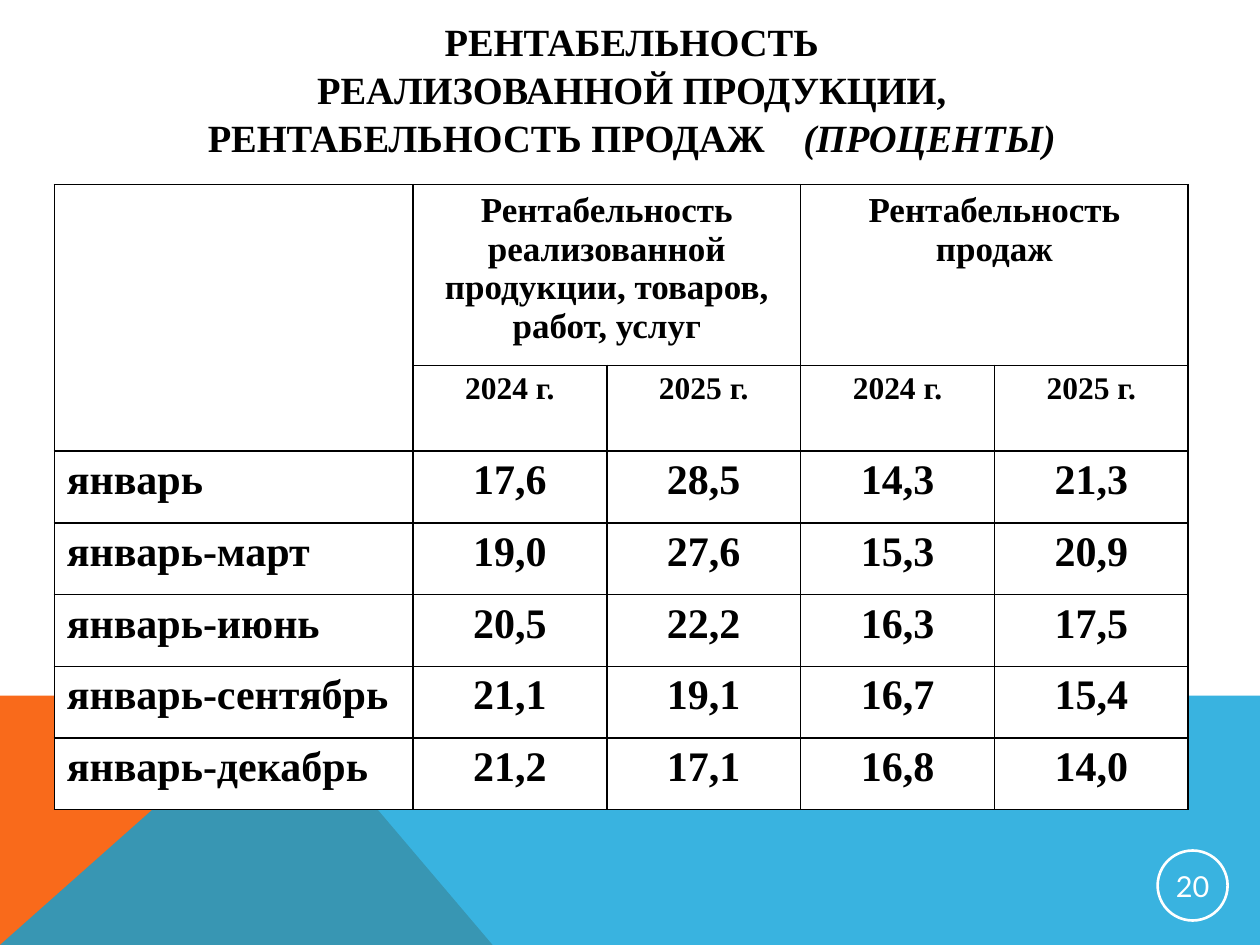
import pptx
import pptx.util
import pptx.dml.color
import pptx.enum.shapes
import pptx.enum.text
import pptx.oxml
import pptx.oxml.ns
import lxml.etree

Pt = pptx.util.Pt
RGBColor = pptx.dml.color.RGBColor
ALIGN = pptx.enum.text.PP_ALIGN
MIDDLE = pptx.enum.text.MSO_ANCHOR.MIDDLE

BLACK = RGBColor(0x00, 0x00, 0x00)
WHITE = RGBColor(0xFF, 0xFF, 0xFF)
ORANGE = RGBColor(0xF9, 0x6A, 0x1B)
BLUE = RGBColor(0x08, 0xA1, 0xD9)
SERIF = "Times New Roman"

COLUMN_WIDTHS = [205, 110.75, 110.75, 110.75, 110.75]
ROW_HEIGHTS = [96, 49] + [41] * 5
GROUPS = {
    1: "Рентабельность реализованной продукции, товаров, работ, услуг",
    3: "Рентабельность продаж",
}
YEARS = ["", "2024 г.", "2025 г.", "2024 г.", "2025 г."]
MONTHS = [
    ["январь", "17,6", "28,5", "14,3", "21,3"],
    ["январь-март", "19,0", "27,6", "15,3", "20,9"],
    ["январь-июнь", "20,5", "22,2", "16,3", "17,5"],
    ["январь-сентябрь", "21,1", "19,1", "16,7", "15,4"],
    ["январь-декабрь", "21,2", "17,1", "16,8", "14,0"],
]


def add_text(paragraph, text, size, font=SERIF, color=BLACK, bold=True,
             italic=False, align=ALIGN.CENTER, spacing=None):
    paragraph.alignment = align
    run = paragraph.add_run()
    run.text = text
    run.font.size = Pt(size)
    run.font.name = font
    run.font.color.rgb = color
    run.font.bold = bold
    run.font.italic = italic
    if spacing:
        run.font._element.set("spc", str(int(spacing * 100)))


def add_band(slide, points, color, opacity=None):
    builder = slide.shapes.build_freeform(Pt(points[0][0]), Pt(points[0][1]), scale=1.0)
    builder.add_line_segments([(Pt(x), Pt(y)) for x, y in points[1:]], close=True)
    shape = builder.convert_to_shape()
    shape.shadow.inherit = False
    shape.fill.solid()
    shape.fill.fore_color.rgb = color
    shape.line.fill.background()
    if opacity:
        color_element = shape._element.spPr.find(".//" + pptx.oxml.ns.qn("a:srgbClr"))
        alpha = lxml.etree.SubElement(color_element, pptx.oxml.ns.qn("a:alpha"))
        alpha.set("val", str(opacity * 1000))


def add_title(slide):
    frame = slide.shapes.add_textbox(Pt(65), Pt(29), Pt(592), Pt(43)).text_frame
    frame.word_wrap = True
    frame.vertical_anchor = MIDDLE
    paragraph = frame.paragraphs[0]
    paragraph.line_spacing = 1.04
    add_text(paragraph, "РЕНТАБЕЛЬНОСТЬ", 22)
    paragraph.add_line_break()
    add_text(paragraph, "РЕАЛИЗОВАННОЙ ПРОДУКЦИИ, РЕНТАБЕЛЬНОСТЬ ПРОДАЖ", 22)
    add_text(paragraph, " ", 22, spacing=16.5)
    add_text(paragraph, "(ПРОЦЕНТЫ)", 22, italic=True)


def style_cell(cell):
    properties = cell._tc.get_or_add_tcPr()
    for side in ("lnL", "lnR", "lnT", "lnB"):
        properties.append(pptx.oxml.parse_xml(
            f'<a:{side} {pptx.oxml.ns.nsdecls("a")} w="12700"><a:solidFill>'
            f'<a:srgbClr val="{BLACK}"/></a:solidFill></a:{side}>'))
    cell.fill.solid()
    cell.fill.fore_color.rgb = WHITE


def add_profit_table(slide):
    table = slide.shapes.add_table(
        len(ROW_HEIGHTS), len(COLUMN_WIDTHS), Pt(31), Pt(105.5),
        Pt(sum(COLUMN_WIDTHS)), Pt(sum(ROW_HEIGHTS))).table
    for column, width in zip(table.columns, COLUMN_WIDTHS):
        column.width = Pt(width)
    for row, height in zip(table.rows, ROW_HEIGHTS):
        row.height = Pt(height)
    for cell in table.iter_cells():
        style_cell(cell)
    table.cell(0, 0).merge(table.cell(1, 0))
    for column, text in GROUPS.items():
        table.cell(0, column).merge(table.cell(0, column + 1))
        add_text(table.cell(0, column).text_frame.paragraphs[0], text, 20)
    for row, values in enumerate([YEARS] + MONTHS, start=1):
        for column, text in enumerate(values):
            if text:
                add_text(table.cell(row, column).text_frame.paragraphs[0], text,
                         18 if row == 1 else 24,
                         align=ALIGN.CENTER if column else ALIGN.LEFT)


def add_page_number(slide):
    circle = slide.shapes.add_shape(
        pptx.enum.shapes.MSO_SHAPE.OVAL, Pt(661.5), Pt(486), Pt(40), Pt(40))
    circle.shadow.inherit = False
    circle.fill.background()
    circle.line.color.rgb = WHITE
    circle.line.width = Pt(1.5)
    frame = circle.text_frame
    frame.vertical_anchor = MIDDLE
    frame.margin_left = frame.margin_right = Pt(1)
    frame.margin_top = frame.margin_bottom = Pt(1)
    add_text(frame.paragraphs[0], "20", 16.5, font="Lato", color=WHITE, bold=False)


def main():
    presentation = pptx.Presentation()
    presentation.slide_width = Pt(720)
    presentation.slide_height = Pt(540)
    slide = presentation.slides.add_slide(presentation.slide_layouts[6])
    add_band(slide, [(0, 540), (0, 397.5), (160.5, 397.5), (281.5, 540)], ORANGE)
    add_band(slide, [(0, 540), (160.5, 397.5), (720, 397.5), (720, 540)], BLUE, opacity=80)
    add_title(slide)
    add_profit_table(slide)
    add_page_number(slide)
    presentation.save("out.pptx")


if __name__ == "__main__":
    main()
